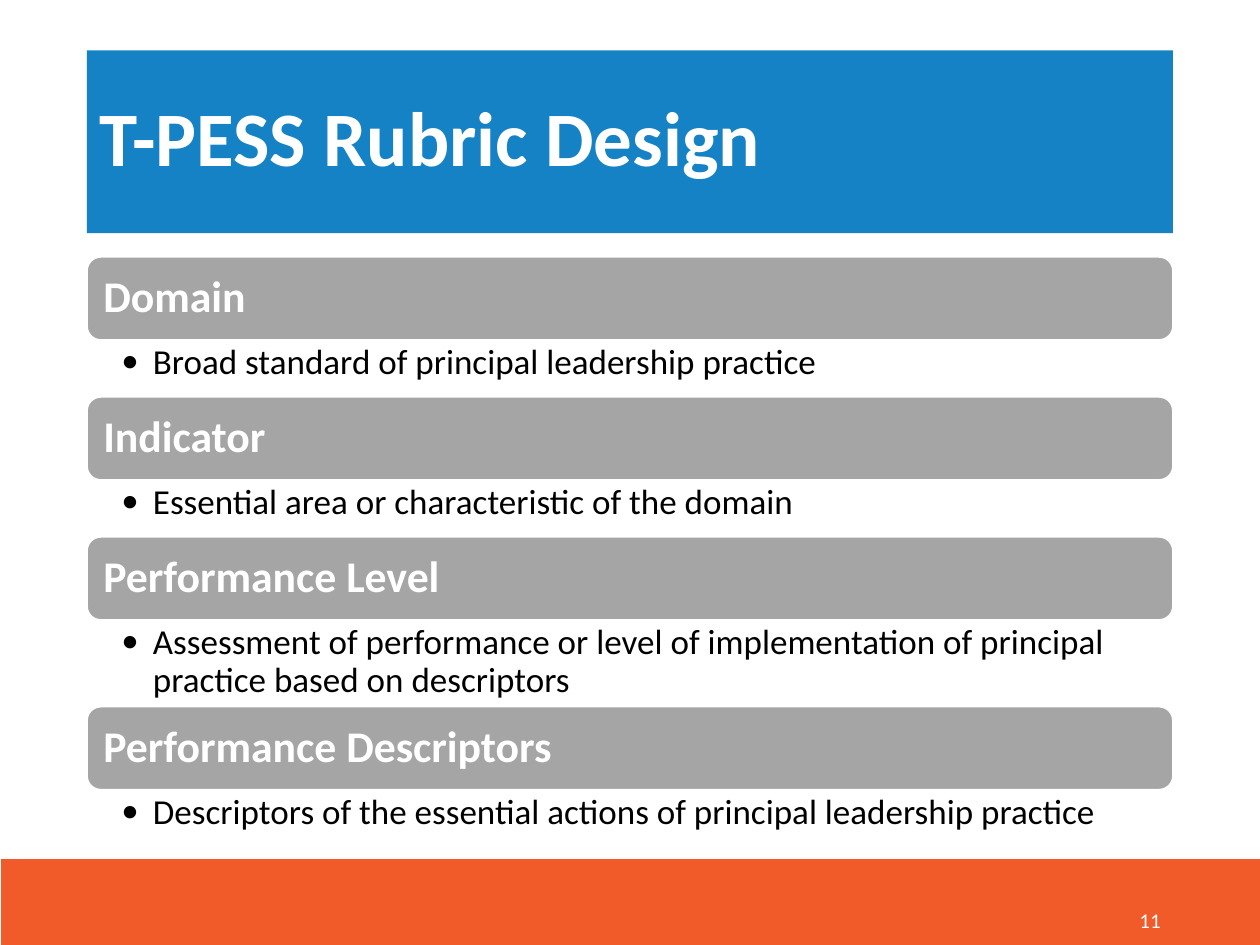
from lxml import etree
from pptx import Presentation
from pptx.dml.color import RGBColor
from pptx.enum.shapes import MSO_SHAPE
from pptx.enum.text import MSO_ANCHOR, PP_ALIGN
from pptx.oxml.ns import qn
from pptx.util import Pt


def rgb(value):
    return RGBColor.from_string(value)


def write(shape, text, size, color, bold=False, insets=(7.2, 3.6, 7.2, 3.6),
          anchor=MSO_ANCHOR.MIDDLE, align=PP_ALIGN.LEFT, spacing=0.9, bullet=False):
    frame = shape.text_frame
    frame.word_wrap = True
    frame.vertical_anchor = anchor
    for side, inset in zip(("left", "top", "right", "bottom"), insets):
        setattr(frame, f"margin_{side}", Pt(inset))
    paragraph = frame.paragraphs[0]
    paragraph.alignment = align
    paragraph.line_spacing = spacing
    if bullet:
        properties = paragraph._p.get_or_add_pPr()
        properties.set("marL", str(Pt(18)))
        properties.set("indent", str(Pt(-18)))
        etree.SubElement(properties, qn("a:buFont")).set("typeface", "Calibri")
        etree.SubElement(properties, qn("a:buChar")).set("char", "•")
    run = paragraph.add_run()
    run.text = text
    run.font.color.rgb = rgb(color)
    for name, value in {"name": "Calibri", "size": Pt(size), "bold": bold}.items():
        setattr(run.font, name, value)


LEFT, WIDTH = 49.7, 620.6
BAR_HEIGHT = 47.5

prs = Presentation()
prs.slide_width, prs.slide_height = Pt(720), Pt(540)
slide = prs.slides.add_slide(prs.slide_layouts[6])
shapes = slide.shapes

# Footer band and title banner
footer = shapes.add_shape(MSO_SHAPE.RECTANGLE, Pt(0.7), Pt(491), Pt(719.3), Pt(49))
banner = shapes.add_shape(MSO_SHAPE.RECTANGLE, Pt(LEFT), Pt(28.8), Pt(WIDTH), Pt(104.4))
for band, color in ((footer, "F15A29"), (banner, "1582C6")):
    band.shadow.inherit = False
    band.fill.solid()
    band.fill.fore_color.rgb = rgb(color)
    band.line.fill.background()
write(banner, "T-PESS Rubric Design", 44, "FFFFFF", bold=True)

# Rubric terms: term, definition, height of the definition
rubric = [
    ("Domain", "Broad standard of principal leadership practice", 32.5),
    ("Indicator", "Essential area or characteristic of the domain", 32.5),
    ("Performance Level", "Assessment of performance or level of implementation "
     "of principal practice based on descriptors", 49.5),
    ("Performance Descriptors", "Descriptors of the essential actions of "
     "principal leadership practice", 32.5),
]
top = 146.8
for term, definition, definition_height in rubric:
    bar = shapes.add_shape(MSO_SHAPE.ROUNDED_RECTANGLE,
                           Pt(LEFT), Pt(top), Pt(WIDTH), Pt(BAR_HEIGHT))
    bar.shadow.inherit = False
    bar.fill.solid()
    bar.fill.fore_color.rgb = rgb("A5A5A5")
    bar.line.color.rgb = rgb("FFFFFF")
    bar.line.width = Pt(1)
    write(bar, term, 25, "FFFFFF", bold=True)
    top += BAR_HEIGHT

    explanation = shapes.add_textbox(Pt(LEFT), Pt(top), Pt(WIDTH), Pt(definition_height))
    write(explanation, definition, 20, "000000", insets=(19.7, 2.3, 13.7, 2.3),
          anchor=MSO_ANCHOR.TOP, bullet=True)
    top += definition_height

# Slide number
page_number = shapes.add_textbox(Pt(508.3), Pt(511.2), Pt(162), Pt(28.8))
write(page_number, "11", 12, "FFFFFF", align=PP_ALIGN.RIGHT, spacing=1.0)

prs.save("out.pptx")
